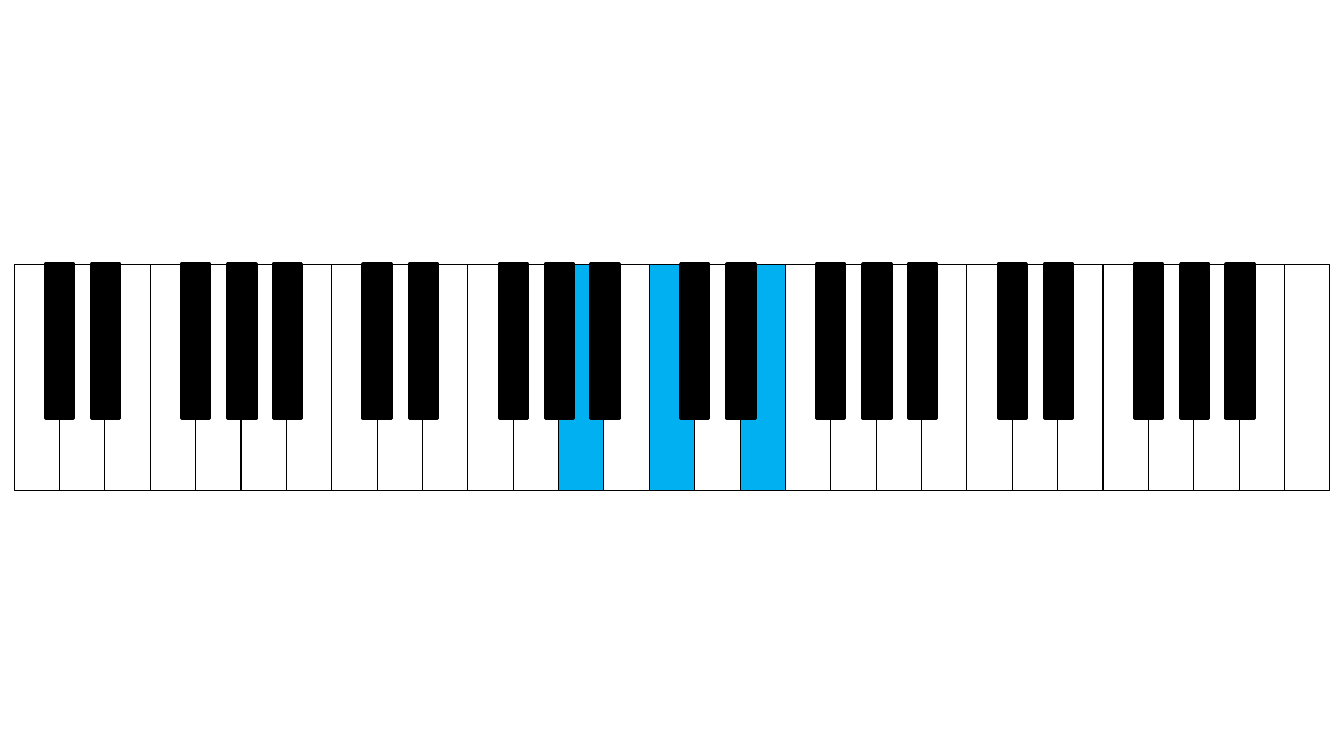
import pptx
import pptx.util
import pptx.dml.color
import pptx.enum.shapes

PX = 9144  # EMU per px, 100 px to the inch
THEME = {
    "ink": pptx.dml.color.RGBColor.from_string("000000"),
    "pressed": pptx.dml.color.RGBColor.from_string("00B0F0"),
    "white_line": pptx.util.Pt(0.75),
    "black_line": pptx.util.Pt(2.25),
}

# Keyboard layout
LEFT, TOP = 14, 262
WHITE_COUNT, WHITE_WIDTH, WHITE_HEIGHT = 29, 45, 225
BLACK_WIDTH, BLACK_HEIGHT = 28, 153
PRESSED_KEYS = {12, 14, 16}
# Place in the octave (C = 0) of each white key with a sharp: offset of the sharp
SHARP_OFFSETS = {0: 31, 1: 32, 3: 31, 4: 32, 5: 32}

deck = pptx.Presentation()
deck.slide_width = 1333 * PX
deck.slide_height = 750 * PX
page = deck.slides.add_slide(deck.slide_layouts[6])
keyboard = page.shapes.add_group_shape()


def add_key(left, width, height, fill, line_width):
    key = keyboard.shapes.add_shape(
        pptx.enum.shapes.MSO_SHAPE.RECTANGLE,
        left * PX, TOP * PX, width * PX, height * PX)
    key.shadow.inherit = False
    if fill is None:
        key.fill.background()
    else:
        key.fill.solid()
        key.fill.fore_color.rgb = fill
    key.line.color.rgb = THEME["ink"]
    key.line.width = line_width


# White keys, with the pressed chord in blue
for index in range(WHITE_COUNT):
    fill = THEME["pressed"] if index in PRESSED_KEYS else None
    add_key(LEFT + index * WHITE_WIDTH, WHITE_WIDTH, WHITE_HEIGHT,
            fill, THEME["white_line"])

# Black keys on top; the last white key has no sharp
for index in range(WHITE_COUNT - 1):
    if index % 7 in SHARP_OFFSETS:
        left = LEFT + index * WHITE_WIDTH + SHARP_OFFSETS[index % 7]
        add_key(left, BLACK_WIDTH, BLACK_HEIGHT,
                THEME["ink"], THEME["black_line"])

deck.save("out.pptx")
